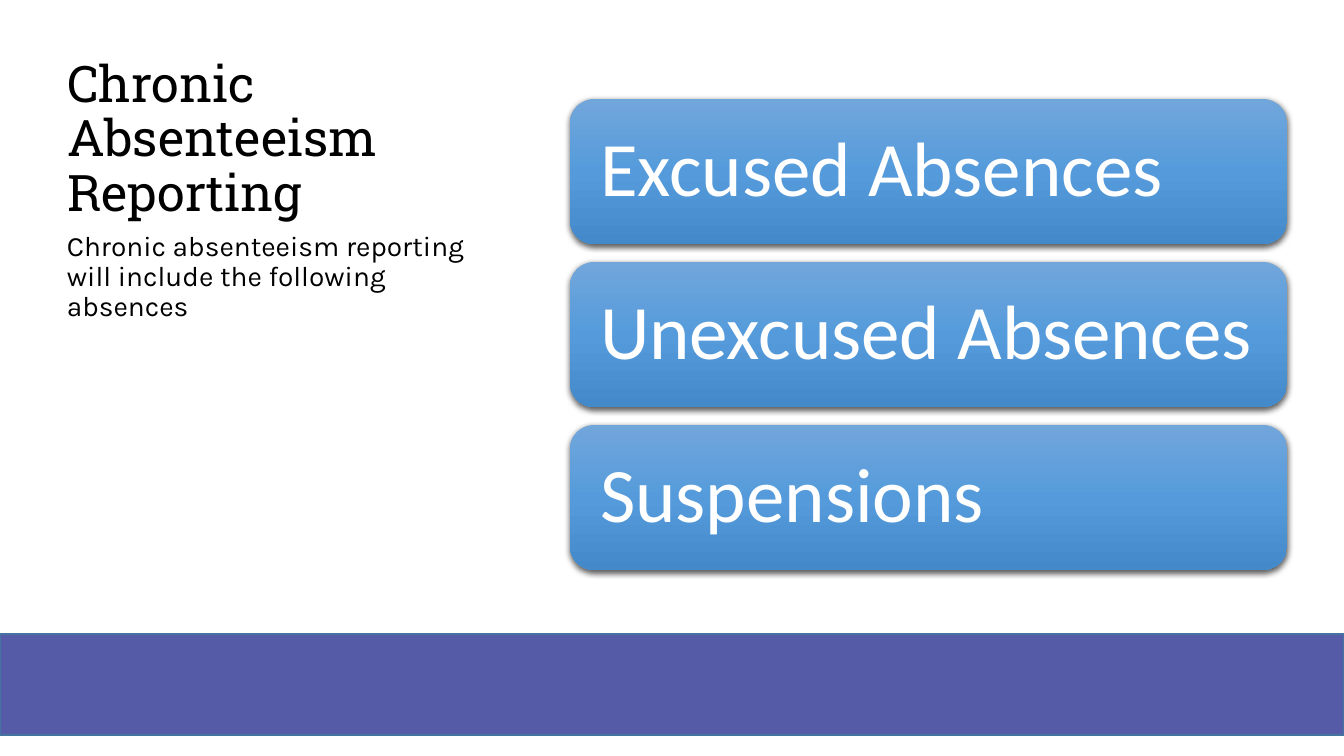
from lxml import etree
from pptx import Presentation
from pptx.dml.color import RGBColor
from pptx.enum.shapes import MSO_SHAPE
from pptx.enum.text import MSO_ANCHOR, MSO_AUTO_SIZE, PP_ALIGN
from pptx.oxml import parse_xml
from pptx.oxml.ns import nsdecls, qn
from pptx.util import Emu, Pt

RECTANGLE = MSO_SHAPE.RECTANGLE
ROUNDED = MSO_SHAPE.ROUNDED_RECTANGLE
TOP, MIDDLE, BOTTOM = MSO_ANCHOR.TOP, MSO_ANCHOR.MIDDLE, MSO_ANCHOR.BOTTOM
LEFT = PP_ALIGN.LEFT
NO_AUTOFIT = MSO_AUTO_SIZE.NONE

PX = 914400 / 100.8
TITLE_ONLY = 5
COLORS = {
    "text": "000000",
    "card_text": "FFFFFF",
    "band": "565BA7",
    "band_line": "43739E",
    "card_top": "71A6DB",
    "card_middle": "559BDB",
    "card_bottom": "448ACA",
    "shadow": "000000",
}
CARD_STOPS = [(0, "card_top"), (50, "card_middle"), (100, "card_bottom")]
ABSENCES = ["Excused Absences", "Unexcused Absences", "Suspensions"]


def px(value):
    return Emu(round(value * PX))


def color(name):
    return RGBColor.from_string(COLORS[name])


class SlideBuilder:
    def __init__(self, presentation):
        self.slide = presentation.slides.add_slide(presentation.slide_layouts[TITLE_ONLY])

    def set_text(self, shape, text, font, size, color_name, anchor):
        frame = shape.text_frame
        frame.word_wrap = True
        frame.auto_size = NO_AUTOFIT
        frame.vertical_anchor = anchor
        frame.text = text
        paragraph = frame.paragraphs[0]
        paragraph.alignment = LEFT
        paragraph.line_spacing = 0.9
        paragraph.font.name = font
        paragraph.font.size = Pt(size)
        paragraph.font.color.rgb = color(color_name)

    def title(self, text, left, top, width, height):
        shape = self.slide.shapes.title
        shape.left, shape.top = px(left), px(top)
        shape.width, shape.height = px(width), px(height)
        self.set_text(shape, text, "Roboto Slab", 36, "text", BOTTOM)

    def body(self, text, left, top, width, height):
        shape = self.slide.shapes.add_textbox(px(left), px(top), px(width), px(height))
        self.set_text(shape, text, "Karla", 20, "text", TOP)

    def shape(self, kind, left, top, width, height):
        shape = self.slide.shapes.add_shape(kind, px(left), px(top), px(width), px(height))
        shape.shadow.inherit = False
        return shape

    def band(self, left, top, width, height):
        shape = self.shape(RECTANGLE, left, top, width, height)
        shape.fill.solid()
        shape.fill.fore_color.rgb = color("band")
        shape.line.color.rgb = color("band_line")
        shape.line.width = Pt(1)

    def card(self, text, left, top, width, height):
        shape = self.shape(ROUNDED, left, top, width, height)
        shape.line.fill.background()
        self.gradient(shape)
        self.drop_shadow(shape)
        frame = shape.text_frame
        frame.margin_left = frame.margin_right = px(23)
        frame.margin_top = frame.margin_bottom = px(23)
        self.set_text(shape, text, "Calibri", 55, "card_text", MIDDLE)

    def gradient(self, shape):
        stops = "".join(
            f'<a:gs pos="{position * 1000}"><a:srgbClr val="{COLORS[name]}"/></a:gs>'
            for position, name in CARD_STOPS
        )
        fill = parse_xml(
            f'<a:gradFill {nsdecls("a")} rotWithShape="1"><a:gsLst>{stops}</a:gsLst>'
            '<a:lin ang="5400000" scaled="0"/></a:gradFill>'
        )
        shape.element.spPr.find(qn("a:prstGeom")).addnext(fill)

    def drop_shadow(self, shape):
        effects = shape.element.spPr.find(qn("a:effectLst"))
        shadow = etree.SubElement(
            effects, qn("a:outerShdw"), blurRad=str(Pt(4.5)), dist=str(Pt(1.5)),
            dir="5400000", algn="ctr", rotWithShape="0",
        )
        shade = etree.SubElement(shadow, qn("a:srgbClr"), val=COLORS["shadow"])
        etree.SubElement(shade, qn("a:alpha"), val="63000")


def main():
    presentation = Presentation()
    presentation.slide_width, presentation.slide_height = px(1344), px(756)
    builder = SlideBuilder(presentation)
    builder.band(0, 634, 1344, 101)
    builder.title("Chronic Absenteeism Reporting", 57, 50, 454, 177)
    builder.body(
        "Chronic absenteeism reporting will include the following absences",
        57, 227, 454, 391,
    )
    for index, absence in enumerate(ABSENCES):
        builder.card(absence, 570, 99 + index * 163, 717, 145)
    presentation.save("out.pptx")


if __name__ == "__main__":
    main()
